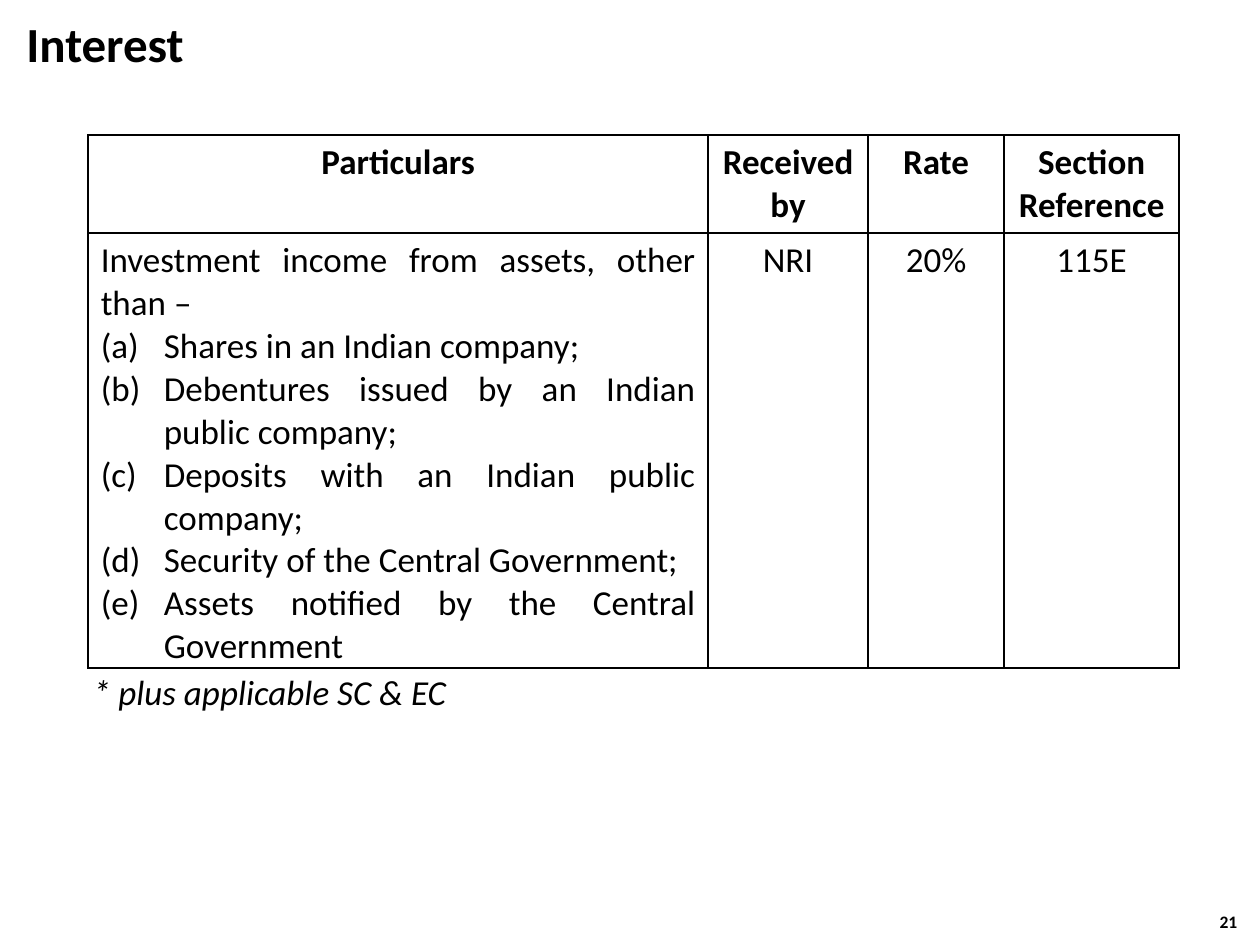
from lxml import etree
from pptx import Presentation
from pptx import util as u
from pptx.dml.color import RGBColor
from pptx.enum import text
from pptx.oxml import ns

Inches, Pt = u.Inches, u.Pt
COLORS = {"text": "000000", "line": "000000", "background": "FFFFFF"}
FONT = "Calibri"
ALIGN = text.PP_ALIGN

COLUMN_WIDTHS = (4.92, 1.27, 1.08, 1.39)
ROW_HEIGHTS = (0.77, 3.43)
HEADERS = ("Particulars", "Received by", "Rate", "Section Reference")
INCOME = "Investment income from assets, other than –"
EXCEPTIONS = (
    "Shares in an Indian company;",
    "Debentures issued by an Indian public company;",
    "Deposits with an Indian public company;",
    "Security of the Central Government;",
    "Assets notified by the Central Government",
)
VALUES = ("NRI", "20%", "115E")


def add_run(paragraph, wording, size, align=ALIGN.LEFT, bold=False, italic=False):
    paragraph.alignment = align
    run = paragraph.add_run()
    run.text = wording
    font = run.font
    font.name, font.size, font.bold, font.italic = FONT, Pt(size), bold, italic
    font.color.rgb = RGBColor.from_string(COLORS["text"])


def letter_item(paragraph):
    """Give the paragraph a hanging (a), (b), (c) number."""
    properties = paragraph._p.get_or_add_pPr()
    properties.set("marL", str(Inches(0.5)))
    properties.set("indent", str(-Inches(0.5)))
    number = etree.SubElement(properties, ns.qn("a:buAutoNum"))
    number.set("type", "alphaLcParenBoth")


def format_cell(cell):
    """Plain fill and a thin line on every side."""
    properties = cell._tc.get_or_add_tcPr()
    for side in ("lnL", "lnR", "lnT", "lnB"):
        line = etree.SubElement(properties, ns.qn(f"a:{side}"), w=str(Pt(1)))
        fill = etree.SubElement(line, ns.qn("a:solidFill"))
        etree.SubElement(fill, ns.qn("a:srgbClr"), val=COLORS["line"])
    cell.fill.solid()
    cell.fill.fore_color.rgb = RGBColor.from_string(COLORS["background"])


def place_title(slide, left, top, width, height):
    title = slide.shapes.title
    title.left, title.top, title.width, title.height = left, top, width, height
    frame = title.text_frame
    frame.auto_size = text.MSO_AUTO_SIZE.NONE
    frame.vertical_anchor = text.MSO_ANCHOR.TOP
    add_run(frame.paragraphs[0], "Interest", 28, bold=True)


def place_table(slide, left, top, width, height):
    table = slide.shapes.add_table(
        len(ROW_HEIGHTS), len(COLUMN_WIDTHS), left, top, width, height
    ).table
    table.first_row = table.horz_banding = False
    for column, column_width in zip(table.columns, COLUMN_WIDTHS):
        column.width = Inches(column_width)
    for row, row_height in zip(table.rows, ROW_HEIGHTS):
        row.height = Inches(row_height)
    for cell in table.iter_cells():
        format_cell(cell)

    # Header row
    for index, header in enumerate(HEADERS):
        paragraph = table.cell(0, index).text_frame.paragraphs[0]
        add_run(paragraph, header, 20, ALIGN.CENTER, bold=True)

    # Particulars with lettered exceptions
    particulars = table.cell(1, 0)
    particulars.margin_bottom = 0
    frame = particulars.text_frame
    add_run(frame.paragraphs[0], INCOME, 20, ALIGN.JUSTIFY)
    for exception in EXCEPTIONS:
        paragraph = frame.add_paragraph()
        letter_item(paragraph)
        add_run(paragraph, exception, 20, ALIGN.JUSTIFY)

    # Recipient, rate and section
    for index, value in enumerate(VALUES, start=1):
        paragraph = table.cell(1, index).text_frame.paragraphs[0]
        add_run(paragraph, value, 20, ALIGN.CENTER)


def place_text(slide, left, top, width, height, wording, size, **style):
    frame = slide.shapes.add_textbox(left, top, width, height).text_frame
    frame.word_wrap = True
    add_run(frame.paragraphs[0], wording, size, **style)


def main():
    presentation = Presentation()
    presentation.slide_width, presentation.slide_height = Inches(10), Inches(7.5)
    slide = presentation.slides.add_slide(presentation.slide_layouts[5])

    place_title(slide, Inches(0.11), Inches(0.06), Inches(6.27), Inches(0.57))
    place_table(slide, Inches(0.7), Inches(1.07),
                Inches(sum(COLUMN_WIDTHS)), Inches(sum(ROW_HEIGHTS)))
    # Footnote and slide number
    place_text(slide, Inches(0.64), Inches(5.27), Inches(6.27), Inches(0.44),
               "* plus applicable SC & EC", 20, italic=True)
    place_text(slide, Inches(9.48), Inches(7.18), Inches(0.54), Inches(0.33),
               "21", 10, align=ALIGN.CENTER, bold=True)

    presentation.save("out.pptx")


if __name__ == "__main__":
    main()
